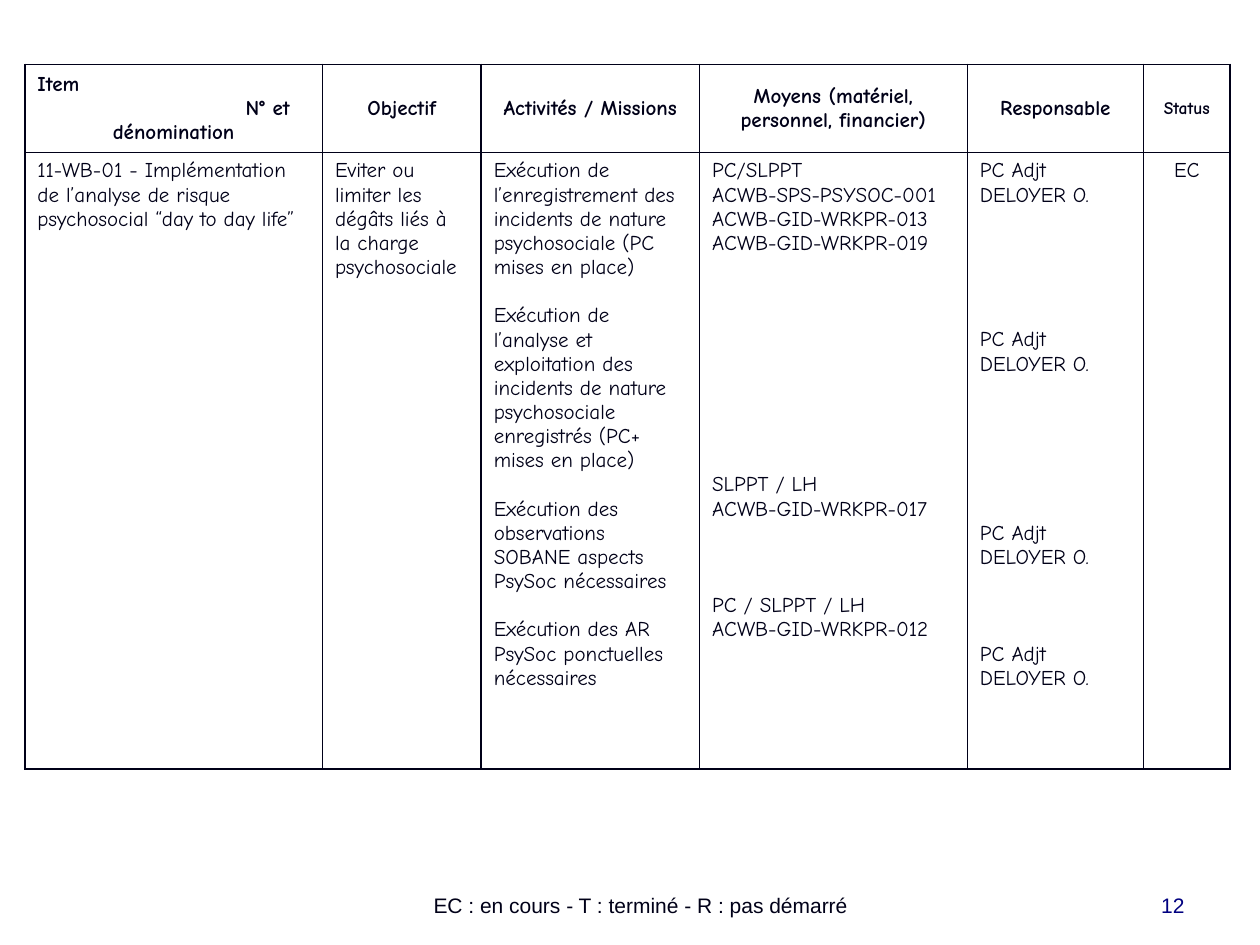
from dataclasses import dataclass

from lxml.etree import SubElement
from pptx import Presentation
from pptx.dml.color import RGBColor as Rgb
from pptx.enum.text import MSO_ANCHOR as Anchor, PP_ALIGN as Align
from pptx.oxml.ns import qn
from pptx.util import Cm, Pt


@dataclass(frozen=True)
class Theme:
    ink: Rgb = Rgb(0x00, 0x00, 0x18)
    number: Rgb = Rgb(0x00, 0x00, 0x80)
    paper: Rgb = Rgb(0xFF, 0xFF, 0xFF)
    table_font: str = "Comic Neue"
    footer_font: str = "Arial"
    body: float = 12
    small: float = 10
    line: float = 13.8
    rule: float = 1


@dataclass(frozen=True)
class Para:
    text: str
    align: Align = Align.LEFT
    blank_lines: int = 0
    indent: float = 0
    size: float = Theme.body


class ActionPlan:
    def __init__(self, slide, theme):
        self.slide = slide
        self.theme = theme

    def add_run(self, paragraph, text, font, size, color, bold=False):
        run = paragraph.add_run()
        run.text = text
        run.font.name = font
        run.font.size = Pt(size)
        run.font.bold = bold
        run.font.color.rgb = color

    def footer(self, text, left, width, align, color):
        frame = self.slide.shapes.add_textbox(
            Cm(left), Cm(17.35), Cm(width), Cm(1.27)).text_frame
        frame.word_wrap = True
        frame.vertical_anchor = Anchor.BOTTOM
        line = frame.paragraphs[0]
        line.alignment = align
        self.add_run(line, text, self.theme.footer_font, self.theme.body, color)

    def borders(self, cell):
        properties = cell._tc.get_or_add_tcPr()
        for side in ("a:lnL", "a:lnR", "a:lnT", "a:lnB"):
            edge = SubElement(properties, qn(side), w=str(Pt(self.theme.rule)))
            fill = SubElement(edge, qn("a:solidFill"))
            SubElement(fill, qn("a:srgbClr"), val=str(self.theme.ink))

    def cell(self, cell, paras, header):
        self.borders(cell)
        cell.fill.solid()
        cell.fill.fore_color.rgb = self.theme.paper
        cell.vertical_anchor = Anchor.MIDDLE if header else Anchor.TOP
        frame = cell.text_frame
        for index, para in enumerate(paras):
            line = frame.add_paragraph() if index else frame.paragraphs[0]
            line.alignment = para.align
            if para.blank_lines:
                line.space_before = Pt(para.blank_lines * self.theme.line)
            if para.indent:
                line._p.get_or_add_pPr().set("marL", str(Cm(para.indent)))
            self.add_run(line, para.text, self.theme.table_font, para.size,
                         self.theme.ink, header)

    def table(self, left, top, widths, heights, rows):
        table = self.slide.shapes.add_table(
            len(rows), len(widths), Cm(left), Cm(top),
            Cm(sum(widths)), Cm(sum(heights))).table
        table.first_row = table.horz_banding = False
        for column, width in zip(table.columns, widths):
            column.width = Cm(width)
        for index, (row, height, contents) in enumerate(
                zip(table.rows, heights, rows)):
            row.height = Cm(height)
            for cell, paras in zip(row.cells, contents):
                self.cell(cell, paras, header=index == 0)


def centred(text, size=Theme.body):
    return Para(text, Align.CENTER, size=size)


def main():
    theme = Theme()
    deck = Presentation()
    deck.slide_width, deck.slide_height = Cm(25.4), Cm(19.05)
    plan = ActionPlan(deck.slides.add_slide(deck.slide_layouts[6]), theme)

    headings = [
        [Para("Item"), Para("N° et", indent=4.2), centred("dénomination")],
        [centred("Objectif")],
        [centred("Activités / Missions")],
        [centred("Moyens (matériel, personnel, financier)")],
        [centred("Responsable")],
        [centred("Status", theme.small)],
    ]
    activities = [
        Para("Exécution de l’enregistrement des incidents de nature "
             "psychosociale (PC mises en place)"),
        Para("Exécution de l’analyse et exploitation des incidents de nature "
             "psychosociale enregistrés (PC+ mises en place)", blank_lines=1),
        Para("Exécution des observations SOBANE aspects PsySoc nécessaires",
             blank_lines=1),
        Para("Exécution des AR PsySoc ponctuelles nécessaires", blank_lines=1),
    ]
    means = [
        Para("PC/SLPPT"),
        Para("ACWB-SPS-PSYSOC-001"),
        Para("ACWB-GID-WRKPR-013"),
        Para("ACWB-GID-WRKPR-019"),
        Para("SLPPT / LH", blank_lines=9),
        Para("ACWB-GID-WRKPR-017"),
        Para("PC / SLPPT / LH", blank_lines=3),
        Para("ACWB-GID-WRKPR-012"),
    ]
    owners = [Para("PC Adjt DELOYER O.", blank_lines=gap)
              for gap in (0, 5, 6, 3)]
    action = [
        [Para("11-WB-01 - Implémentation de l’analyse de risque "
              "psychosocial “day to day life”")],
        [Para("Eviter ou limiter les dégâts liés à la charge psychosociale")],
        activities,
        means,
        owners,
        [centred("EC")],
    ]

    plan.footer("EC : en cours - T : terminé - R : pas démarré",
                5.92, 14, Align.CENTER, theme.ink)
    plan.table(0.5, 1.3, (6, 3.2, 4.4, 5.4, 3.55, 1.75), (1.73, 12.42),
               (headings, action))
    plan.footer("12", 18.21, 5.92, Align.RIGHT, theme.number)
    deck.save("out.pptx")


if __name__ == "__main__":
    main()
